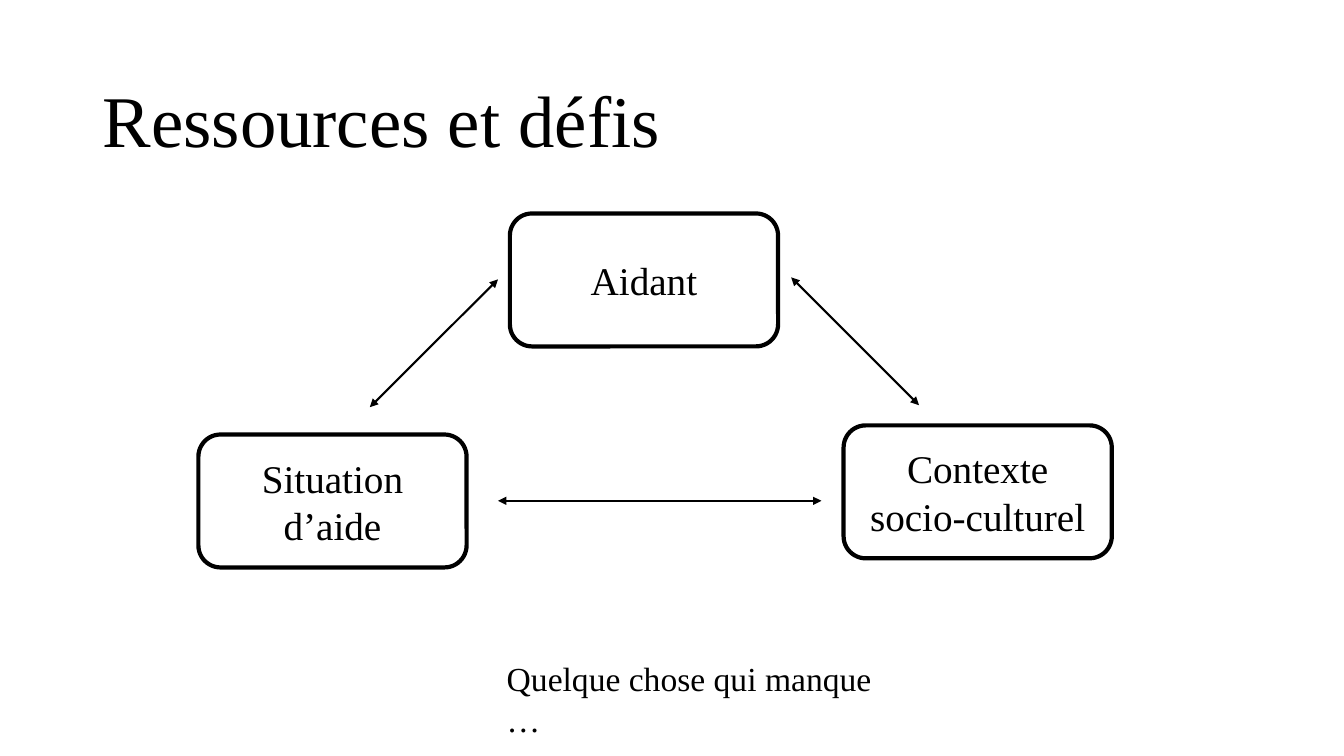
from lxml import etree
from pptx import Presentation
from pptx.dml.color import RGBColor
from pptx.enum.shapes import MSO_CONNECTOR, MSO_SHAPE
from pptx.enum.text import MSO_ANCHOR, PP_ALIGN
from pptx.oxml.ns import qn
from pptx.util import Cm, Pt

ROUNDED = MSO_SHAPE.ROUNDED_RECTANGLE
STRAIGHT = MSO_CONNECTOR.STRAIGHT
MIDDLE, TOP = MSO_ANCHOR.MIDDLE, MSO_ANCHOR.TOP
CENTER, LEFT = PP_ALIGN.CENTER, PP_ALIGN.LEFT

COLORS = {"ink": "000000", "background": "FFFFFF"}
FONT = "Times New Roman"
NODE_W, NODE_H = 6.76, 3.35

# Left and top of each node, in cm within the diagram
NODES = [
    ("Situation d’aide", 0, 5.57),
    ("Aidant", 7.85, 0),
    ("Contexte socio-culturel", 16.26, 5.34),
]
# Start and end of each arrow, in cm within the diagram
ARROWS = [
    ((7.55, 1.66), (4.32, 4.88)),
    ((15.7, 7.24), (7.55, 7.24)),
    ((18.16, 4.83), (14.94, 1.61)),
]


def color(name):
    return RGBColor.from_string(COLORS[name])


def write(sp, text, size, align, anchor):
    tf = sp.text_frame
    tf.word_wrap = True
    tf.vertical_anchor = anchor
    p = tf.paragraphs[0]
    p.text = text
    p.alignment = align
    p.font.name = FONT
    p.font.size = Pt(size)
    p.font.color.rgb = color("ink")
    return p


def add_text(slide, box, text, size, anchor):
    sp = slide.shapes.add_textbox(*map(Cm, box))
    return write(sp, text, size, LEFT, anchor)


def add_node(slide, left, top, text):
    sp = slide.shapes.add_shape(ROUNDED, Cm(left), Cm(top), Cm(NODE_W), Cm(NODE_H))
    sp.shadow.inherit = False
    sp.fill.background()
    sp.line.color.rgb = color("ink")
    sp.line.width = Pt(3)
    write(sp, text, 28, CENTER, MIDDLE)


def add_double_arrow(slide, start, end):
    arrow = slide.shapes.add_connector(STRAIGHT, *map(Cm, start + end))
    arrow.line.color.rgb = color("ink")
    arrow.line.width = Pt(1.5)
    ln = arrow.line._get_or_add_ln()
    for tag in ("a:headEnd", "a:tailEnd"):
        etree.SubElement(ln, qn(tag), type="triangle")
    etree.SubElement(arrow._element.spPr, qn("a:effectLst"))


def add_diagram(slide, left, top):
    """Three linked nodes, placed from the diagram's top left corner."""
    for text, x, y in NODES:
        add_node(slide, left + x, top + y, text)
    for start, end in ARROWS:
        add_double_arrow(slide, *((left + x, top + y) for x, y in (start, end)))


def main():
    prs = Presentation()
    prs.slide_width, prs.slide_height = Cm(33.87), Cm(19.05)
    slide = prs.slides.add_slide(prs.slide_layouts[6])
    slide.background.fill.solid()
    slide.background.fill.fore_color.rgb = color("background")

    title = add_text(slide, (2.34, 1.55, 29.21, 3.15), "Ressources et défis", 52, MIDDLE)
    title.line_spacing = 0.9
    add_diagram(slide, 5, 5.38)
    add_text(slide, (12.52, 16.46, 10.59, 1.27), "Quelque chose qui manque …", 24, TOP)
    prs.save("out.pptx")


if __name__ == "__main__":
    main()
